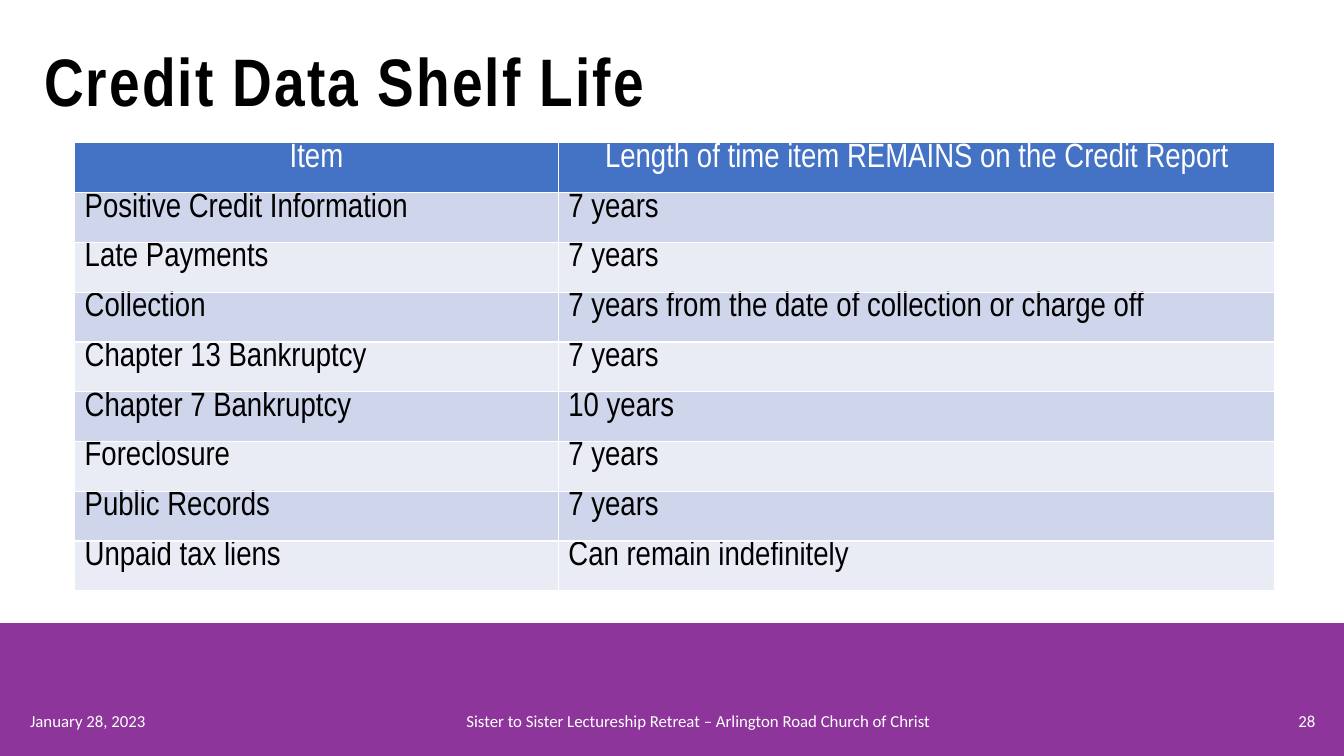
from lxml.etree import SubElement
from pptx import Presentation
from pptx.dml.color import RGBColor
from pptx.enum.shapes import MSO_SHAPE as Shape
from pptx.enum.text import MSO_ANCHOR as Anchor, MSO_AUTO_SIZE as AutoSize, PP_ALIGN as Align
from pptx.oxml.ns import qn
from pptx.util import Cm, Pt

WHITE, BLACK, PURPLE = "FFFFFF", "000000", "8D359A"
HEADER_BLUE, BANDS = "4472C4", ("E9EBF5", "CFD5EA")

SHELF_LIFE = [
    ("Item", "Length of time item REMAINS on the Credit Report"),
    ("Positive Credit Information", "7 years"),
    ("Late Payments", "7 years"),
    ("Collection", "7 years from the date of collection or charge off"),
    ("Chapter 13 Bankruptcy", "7 years"),
    ("Chapter 7 Bankruptcy", "10 years"),
    ("Foreclosure", "7 years"),
    ("Public Records", "7 years"),
    ("Unpaid tax liens", "Can remain indefinitely"),
]

FOOTER = [
    ("January 28, 2023", 0.51, 3.91, Align.LEFT),
    ("Sister to Sister Lectureship Retreat – Arlington Road Church of Christ",
     4.93, 25.35, Align.CENTER),
    ("28", 30.78, 2.62, Align.RIGHT),
]


def colour(value):
    return RGBColor.from_string(value)


def apply(target, values):
    for key, value in values.items():
        setattr(target, key, value)


class SlideBuilder:
    heading = {"name": "Arial Narrow", "size": Pt(48), "bold": True}
    body = {"name": "Arial Narrow", "size": Pt(24), "bold": False}
    small = {"name": "Calibri", "size": Pt(12), "bold": False}

    def __init__(self, slide):
        self.slide = slide

    def add_text(self, frame, text, style, ink, align=Align.LEFT):
        paragraph = frame.paragraphs[0]
        paragraph.alignment = align
        run = paragraph.add_run()
        run.text = text
        apply(run.font, style)
        run.font.color.rgb = colour(ink)
        return paragraph, run

    def title(self, text, left, top, width, height):
        heading = self.slide.shapes.title
        apply(heading, {"left": Cm(left), "top": Cm(top),
                        "width": Cm(width), "height": Cm(height)})
        apply(heading.text_frame, {"vertical_anchor": Anchor.MIDDLE,
                                   "auto_size": AutoSize.NONE, "word_wrap": True})
        paragraph, run = self.add_text(heading.text_frame, text, self.heading, BLACK)
        paragraph.line_spacing = 0.9
        run.font._element.set("spc", "150")

    def band(self, fill, left, top, width, height):
        strip = self.slide.shapes.add_shape(
            Shape.RECTANGLE, Cm(left), Cm(top), Cm(width), Cm(height))
        strip.shadow.inherit = False
        strip.fill.solid()
        strip.fill.fore_color.rgb = colour(fill)
        strip.line.fill.background()

    def label(self, text, left, top, width, height, align):
        box = self.slide.shapes.add_textbox(Cm(left), Cm(top), Cm(width), Cm(height))
        apply(box.text_frame, {"word_wrap": True, "vertical_anchor": Anchor.MIDDLE})
        self.add_text(box.text_frame, text, self.small, WHITE, align)

    def table(self, rows, left, top, widths, height):
        grid = self.slide.shapes.add_table(
            len(rows), len(widths), Cm(left), Cm(top), Cm(sum(widths)), Cm(height)).table
        for column, width in zip(grid.columns, widths):
            column.width = Cm(width)
        for r, row in enumerate(rows):
            is_header = r == 0
            for c, text in enumerate(row):
                cell = grid.cell(r, c)
                apply(cell, {"margin_top": 0, "margin_bottom": 0})
                self.add_text(cell.text_frame, text, self.body,
                              WHITE if is_header else BLACK,
                              Align.CENTER if is_header else Align.LEFT)
                self.borders(cell)
                cell.fill.solid()
                cell.fill.fore_color.rgb = colour(HEADER_BLUE if is_header else BANDS[r % 2])

    def borders(self, cell):
        properties = cell._tc.get_or_add_tcPr()
        for side in ("a:lnL", "a:lnR", "a:lnT", "a:lnB"):
            line = SubElement(properties, qn(side), w=str(Pt(1)))
            SubElement(SubElement(line, qn("a:solidFill")), qn("a:srgbClr"), val=WHITE)


def main():
    deck = Presentation()
    apply(deck, {"slide_width": Cm(33.87), "slide_height": Cm(19.05)})
    page = SlideBuilder(deck.slides.add_slide(deck.slide_layouts[5]))

    # Footer band
    page.band(PURPLE, 0, 15.7, 33.87, 3.35)

    # Title and table
    page.title("Credit Data Shelf Life", 0.86, 0.91, 27.94, 2.46)
    page.table(SHELF_LIFE, 1.88, 3.6, (12.19, 18.06), 11.29)

    # Footer texts
    for text, left, width, align in FOOTER:
        page.label(text, left, 17.65, width, 1.02, align)

    deck.save("out.pptx")


if __name__ == "__main__":
    main()
